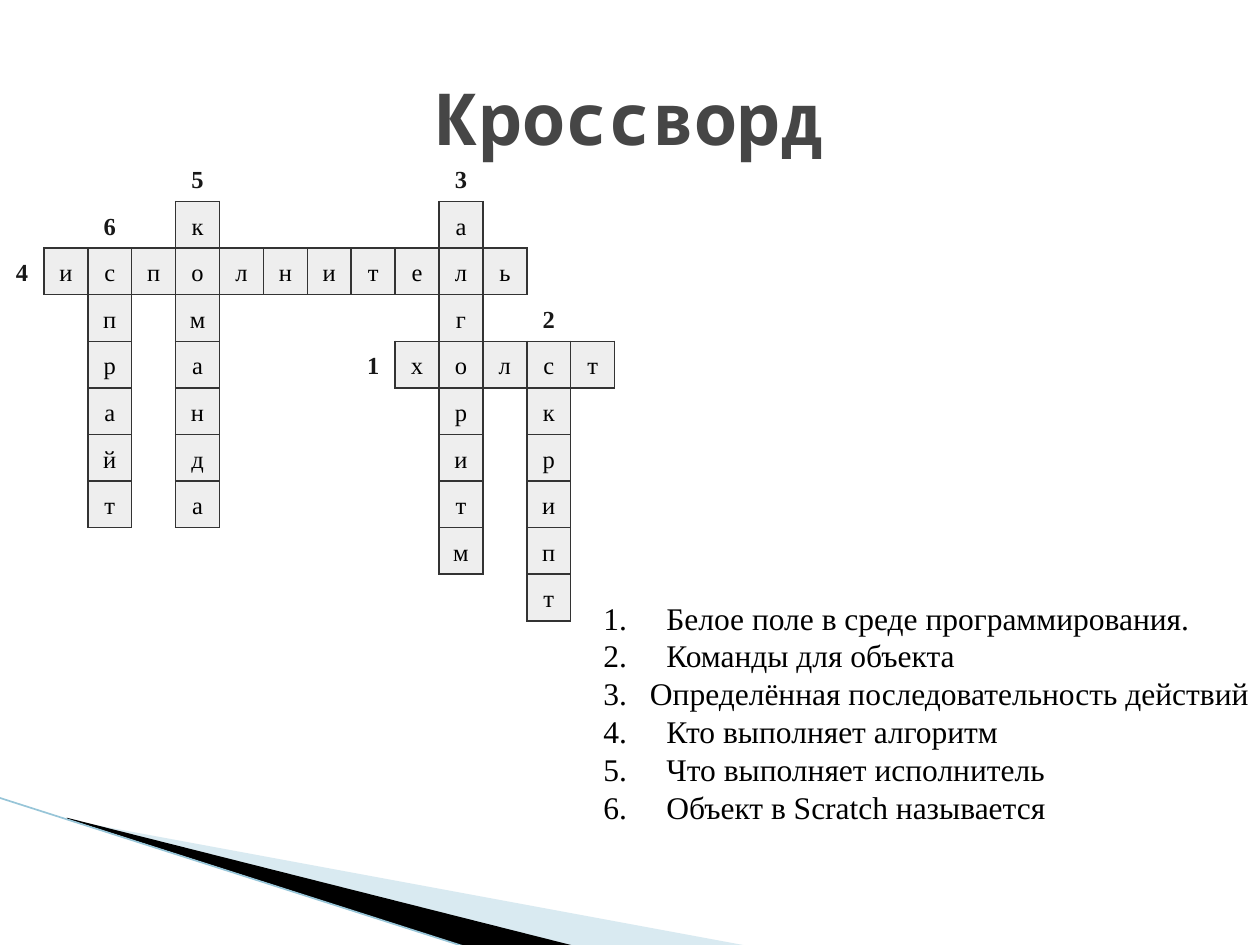
from lxml import etree
from pptx import Presentation, util as u
from pptx.dml.color import RGBColor
from pptx.enum import shapes, text
from pptx.oxml.ns import qn

BLACK = RGBColor(0, 0, 0)
GREY = RGBColor(0x46, 0x46, 0x46)
DIGIT = RGBColor(0x18, 0x18, 0x18)
EDGE = RGBColor(0x33, 0x33, 0x33)
CELL = RGBColor(0xEE, 0xEE, 0xEE)
PALE = RGBColor(0xA0, 0xCB, 0xDC)
BLUE = RGBColor(0x97, 0xC5, 0xD8)
SERIF, MONO = "Times New Roman", "Noto Sans Mono"

ROWS, COLS = 10, 14
# number, word, row and column of its first letter, step down, step across
WORDS = [
    (1, "холст", 4, 9, 0, 1),
    (2, "скрипт", 4, 12, 1, 0),
    (3, "алгоритм", 1, 10, 1, 0),
    (4, "исполнитель", 2, 1, 0, 1),
    (5, "команда", 1, 4, 1, 0),
    (6, "спрайт", 2, 2, 1, 0),
]
# clue and its tab stop in inches
CLUES = [
    ("Белое поле в среде программирования.", 0.5),
    ("Команды для объекта", 0.5),
    ("Определённая последовательность действий", 0.37),
    ("Кто выполняет алгоритм", 0.5),
    ("Что выполняет исполнитель", 0.5),
    ("Объект в Scratch называется", 0.5),
]
SIDES = {"L": (0, -1), "R": (0, 1), "T": (-1, 0), "B": (1, 0)}


def add(node, tag, **attrs):
    return etree.SubElement(node, qn(tag), attrs)


class Board:
    """Draws on one slide; places are percentages of its width and height."""

    def __init__(self, deck):
        self.deck = deck
        self.slide = deck.slides.add_slide(deck.slide_layouts[6])
        self.items = self.slide.shapes

    def spot(self, x, y):
        wide, high = self.deck.slide_width, self.deck.slide_height
        return u.Emu(round(wide * x / 100)), u.Emu(round(high * y / 100))

    def font(self, para, size, color=BLACK, name=SERIF, bold=False):
        para.font.size, para.font.name = u.Pt(size), name
        para.font.bold, para.font.color.rgb = bold, color

    def wedge(self, points, color, alpha=None):
        first, *rest = [self.spot(*p) for p in points]
        form = self.items.build_freeform(*first)
        form.add_line_segments(rest)
        shape = form.convert_to_shape()
        shape.shadow.inherit = False
        shape.line.fill.background()
        shape.fill.solid()
        shape.fill.fore_color.rgb = color
        if alpha:
            tint = shape.fill._xPr.find(".//" + qn("a:srgbClr"))
            add(tint, "a:alpha", val=str(alpha * 1000))

    def line(self, start, end, color, width):
        rule = self.items.add_connector(
            shapes.MSO_CONNECTOR.STRAIGHT, *self.spot(*start), *self.spot(*end))
        rule.line.color.rgb, rule.line.width = color, u.Pt(width)
        add(rule._element.spPr, "a:effectLst")

    def frame(self, x, y, wide, high):
        box = self.items.add_textbox(*self.spot(x, y), *self.spot(wide, high))
        frame = box.text_frame
        frame.word_wrap = True
        frame.vertical_anchor = text.MSO_ANCHOR.MIDDLE
        return frame

    def title(self, words, *place):
        para = self.frame(*place).paragraphs[0]
        para.text, para.alignment = words, text.PP_ALIGN.CENTER
        self.font(para, 41, GREY, MONO, True)

    def clues(self, clues, *place):
        frame = self.frame(*place)
        for n, (clue, stop) in enumerate(clues, 1):
            para = frame.paragraphs[0] if n == 1 else frame.add_paragraph()
            para.text, para.alignment = f"{n}.\t{clue}", text.PP_ALIGN.JUSTIFY
            tabs = add(para._p.get_or_add_pPr(), "a:tabLst")
            add(tabs, "a:tab", pos=str(u.Inches(stop)), algn="l")
            self.font(para, 18)

    def edge(self, cell, side, shown):
        rule = add(cell._tc.get_or_add_tcPr(), "a:ln" + side, w=str(u.Pt(1)))
        if shown:
            add(add(rule, "a:solidFill"), "a:srgbClr", val=str(EDGE))
        else:
            add(rule, "a:noFill")

    def puzzle(self, words, *place):
        x, y, wide, high = place
        table = self.items.add_table(
            ROWS, COLS, *self.spot(x, y), *self.spot(wide, high)).table
        table.first_row = table.horz_banding = False
        letters, digits = {}, {}
        for n, word, row, col, down, over in words:
            digits[row - down, col - over] = str(n)
            for i, letter in enumerate(word):
                letters[row + i * down, col + i * over] = letter
        for row in range(ROWS):
            for col in range(COLS):
                cell, at = table.cell(row, col), (row, col)
                full = at in letters
                for side, (down, over) in SIDES.items():
                    self.edge(cell, side, full or (row + down, col + over) in letters)
                if full:
                    cell.fill.solid()
                    cell.fill.fore_color.rgb = CELL
                else:
                    cell.fill.background()
                cell.margin_left = cell.margin_right = 0
                cell.margin_top = cell.margin_bottom = 0
                cell.vertical_anchor = text.MSO_ANCHOR.MIDDLE
                para = cell.text_frame.paragraphs[0]
                para.text = letters.get(at) or digits.get(at, "")
                para.alignment, para.line_spacing = text.PP_ALIGN.CENTER, 1.15
                self.font(para, 14, BLACK if full else DIGIT, bold=not full)


def main():
    deck = Presentation()
    deck.slide_width, deck.slide_height = u.Inches(10), u.Inches(7.5)
    board = Board(deck)
    board.wedge([(5.5, 86.8), (59.5, 100.13), (45.6, 100.13), (5.5, 86.67)], PALE, 40)
    board.wedge([(5.3, 86.53), (45.7, 100.13), (37.2, 100.27), (5.4, 86.67)], BLACK)
    board.line((-0.1, 84.4), (37.1, 100.27), BLUE, 0.95)
    board.title("Кроссворд", 5, 4, 90, 16.67)
    board.clues(CLUES, 46.9, 62.53, 62.2, 25.6)
    board.puzzle(WORDS, 0, 16.4, 48.8, 49.33)
    deck.save("out.pptx")


if __name__ == "__main__":
    main()
